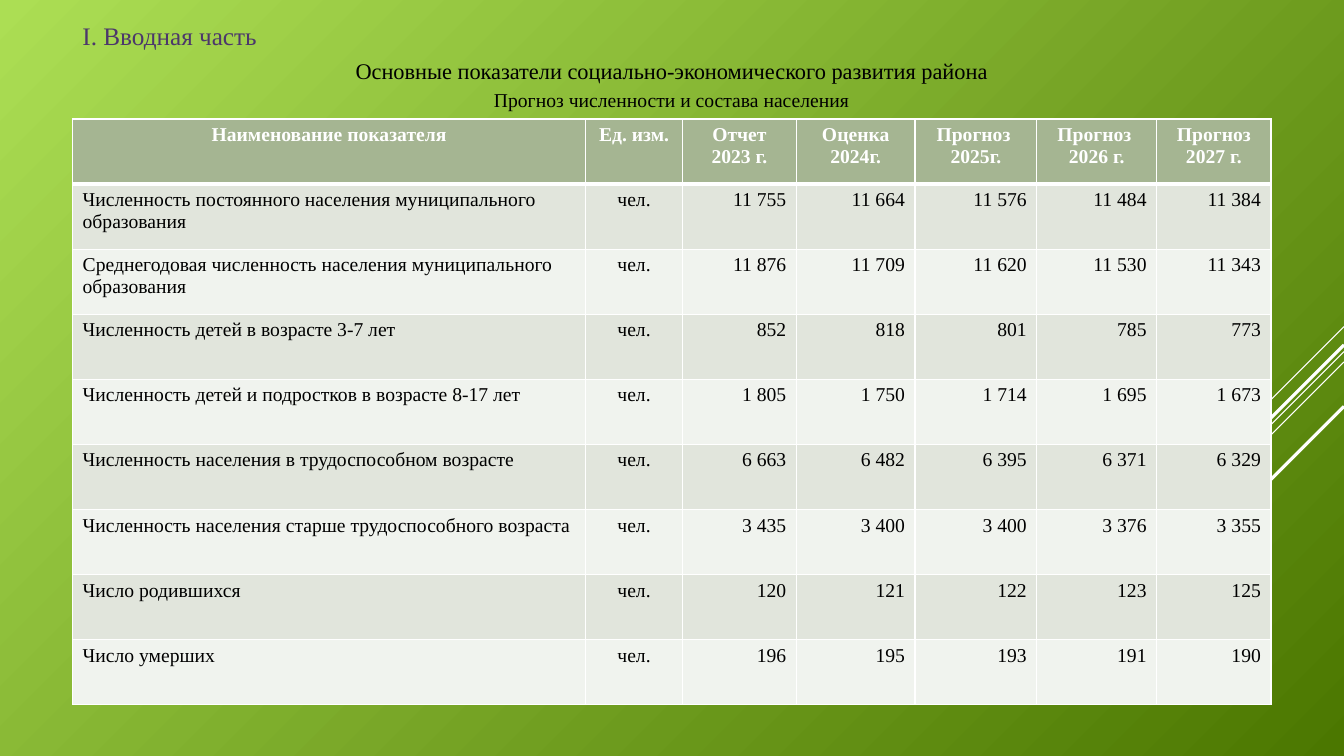
from lxml import etree
from pptx import Presentation
from pptx.dml.color import RGBColor
from pptx.enum.shapes import MSO_CONNECTOR
from pptx.enum.text import MSO_ANCHOR, PP_ALIGN
from pptx.oxml.ns import qn
from pptx.util import Cm, Pt

STRAIGHT = MSO_CONNECTOR.STRAIGHT
TOP, MIDDLE = MSO_ANCHOR.TOP, MSO_ANCHOR.MIDDLE
LEFT, CENTER, RIGHT = PP_ALIGN.LEFT, PP_ALIGN.CENTER, PP_ALIGN.RIGHT

SLIDE_WIDTH, SLIDE_HEIGHT = 33.87, 19.05
CONTENT_LEFT, CONTENT_WIDTH = 1.83, 30.2

# Start height at the right edge, length along each axis, line width
RAYS = [
    (8.23, 2.54, 0.75),
    (8.86, 8.28, 0.75),
    (9.12, 5.26, 0.75),
    (8.69, 4.87, 2.25),
    (10.24, 3.53, 2.25),
]

COLUMN_WIDTHS = [12.93, 2.44, 2.87, 2.99, 3.07, 3.02, 2.88]
ROW_HEIGHT = 1.64
HEADER = ["Наименование показателя", "Ед. изм.", "Отчет 2023 г.", "Оценка\n2024г.",
          "Прогноз \n2025г.", "Прогноз \n2026 г.", "Прогноз 2027 г."]
UNIT = "чел."
INDICATORS = [
    ("Численность постоянного населения муниципального образования",
     ["11 755", "11 664", "11 576", "11 484", "11 384"]),
    ("Среднегодовая численность населения муниципального образования",
     ["11 876", "11 709", "11 620", "11 530", "11 343"]),
    ("Численность детей в возрасте 3-7 лет",
     ["852", "818", "801", "785", "773"]),
    ("Численность детей и подростков в возрасте 8-17 лет",
     ["1 805", "1 750", "1 714", "1 695", "1 673"]),
    ("Численность населения в трудоспособном возрасте",
     ["6 663", "6 482", "6 395", "6 371", "6 329"]),
    ("Численность населения старше трудоспособного возраста",
     ["3 435", "3 400", "3 400", "3 376", "3 355"]),
    ("Число родившихся", ["120", "121", "122", "123", "125"]),
    ("Число умерших", ["196", "195", "193", "191", "190"]),
]


def color(hex_string):
    return RGBColor.from_string(hex_string)


class SlideBuilder:
    font = "Times New Roman"
    white, black, purple = "FFFFFF", "000000", "4C376B"
    header_fill, band_fills = "A5B592", ("E1E5DC", "F0F3EE")
    thin_border, thick_border = 0.96, 3

    def __init__(self, slide):
        self.slide = slide

    def background(self, start, end):
        fill = self.slide.background.fill
        fill.gradient()
        fill.gradient_angle = 315
        for stop, hex_string in zip(fill.gradient_stops, (start, end)):
            stop.color.rgb = color(hex_string)

    def ray(self, top, length, width):
        connector = self.slide.shapes.add_connector(
            STRAIGHT, Cm(SLIDE_WIDTH), Cm(top), Cm(SLIDE_WIDTH - length), Cm(top + length))
        connector.line.color.rgb = color(self.white)
        connector.line.width = Pt(width)
        etree.SubElement(connector._element.spPr, qn("a:effectLst"))

    def style(self, paragraph, size, hex_string, alignment, bold=False):
        paragraph.alignment = alignment
        paragraph.font.name = self.font
        paragraph.font.size = Pt(size)
        paragraph.font.bold = bold
        paragraph.font.color.rgb = color(hex_string)

    def text(self, text, top, size, hex_string, alignment, anchor=TOP, before=0, spacing=1.0):
        box = self.slide.shapes.add_textbox(
            Cm(CONTENT_LEFT), Cm(top), Cm(CONTENT_WIDTH), Cm(0.82))
        frame = box.text_frame
        frame.word_wrap = True
        frame.vertical_anchor = anchor
        frame.text = text
        paragraph = frame.paragraphs[0]
        paragraph.space_before = Pt(before)
        paragraph.line_spacing = spacing
        self.style(paragraph, size, hex_string, alignment)

    def border(self, cell, side, width):
        properties = cell._tc.get_or_add_tcPr()
        line = etree.SubElement(properties, qn(f"a:ln{side}"), w=str(Pt(width)))
        fill = etree.SubElement(line, qn("a:solidFill"))
        etree.SubElement(fill, qn("a:srgbClr"), val=self.white)

    def cell(self, cell, text, row, column):
        is_header = row == 0
        widths = {side: self.thin_border for side in "LRTB"}
        if row < 2:
            widths["B" if is_header else "T"] = self.thick_border
        for side, width in widths.items():
            self.border(cell, side, width)
        cell.fill.solid()
        cell.fill.fore_color.rgb = color(
            self.header_fill if is_header else self.band_fills[(row - 1) % 2])
        cell.text = text
        if is_header or column == 1:
            alignment = CENTER
        else:
            alignment = LEFT if column == 0 else RIGHT
        for paragraph in cell.text_frame.paragraphs:
            self.style(paragraph, 14, self.white if is_header else self.black,
                       alignment, is_header)

    def table(self, rows, top):
        table = self.slide.shapes.add_table(
            len(rows), len(COLUMN_WIDTHS), Cm(CONTENT_LEFT), Cm(top),
            Cm(CONTENT_WIDTH), Cm(ROW_HEIGHT * len(rows))).table
        table.horz_banding = False
        for column, width in zip(table.columns, COLUMN_WIDTHS):
            column.width = Cm(width)
        for row_index, texts in enumerate(rows):
            table.rows[row_index].height = Cm(ROW_HEIGHT)
            for column_index, text in enumerate(texts):
                self.cell(table.cell(row_index, column_index), text, row_index, column_index)


def main():
    presentation = Presentation()
    presentation.slide_width = Cm(SLIDE_WIDTH)
    presentation.slide_height = Cm(SLIDE_HEIGHT)
    builder = SlideBuilder(presentation.slides.add_slide(presentation.slide_layouts[6]))

    # Background with diagonal rays
    builder.background("ACDE54", "4B7700")
    for ray in RAYS:
        builder.ray(*ray)

    # Headings
    builder.text("I. Вводная часть", 0.48, 18, builder.purple, LEFT, MIDDLE)
    builder.text("Основные показатели социально-экономического развития района",
                 1.32, 16, builder.black, CENTER, before=6)
    builder.text("Прогноз численности и состава населения",
                 2.16, 14, builder.black, CENTER, before=6, spacing=0.9)

    # Population forecast
    builder.table([HEADER] + [[name, UNIT, *values] for name, values in INDICATORS], 3)

    presentation.save("out.pptx")


if __name__ == "__main__":
    main()
